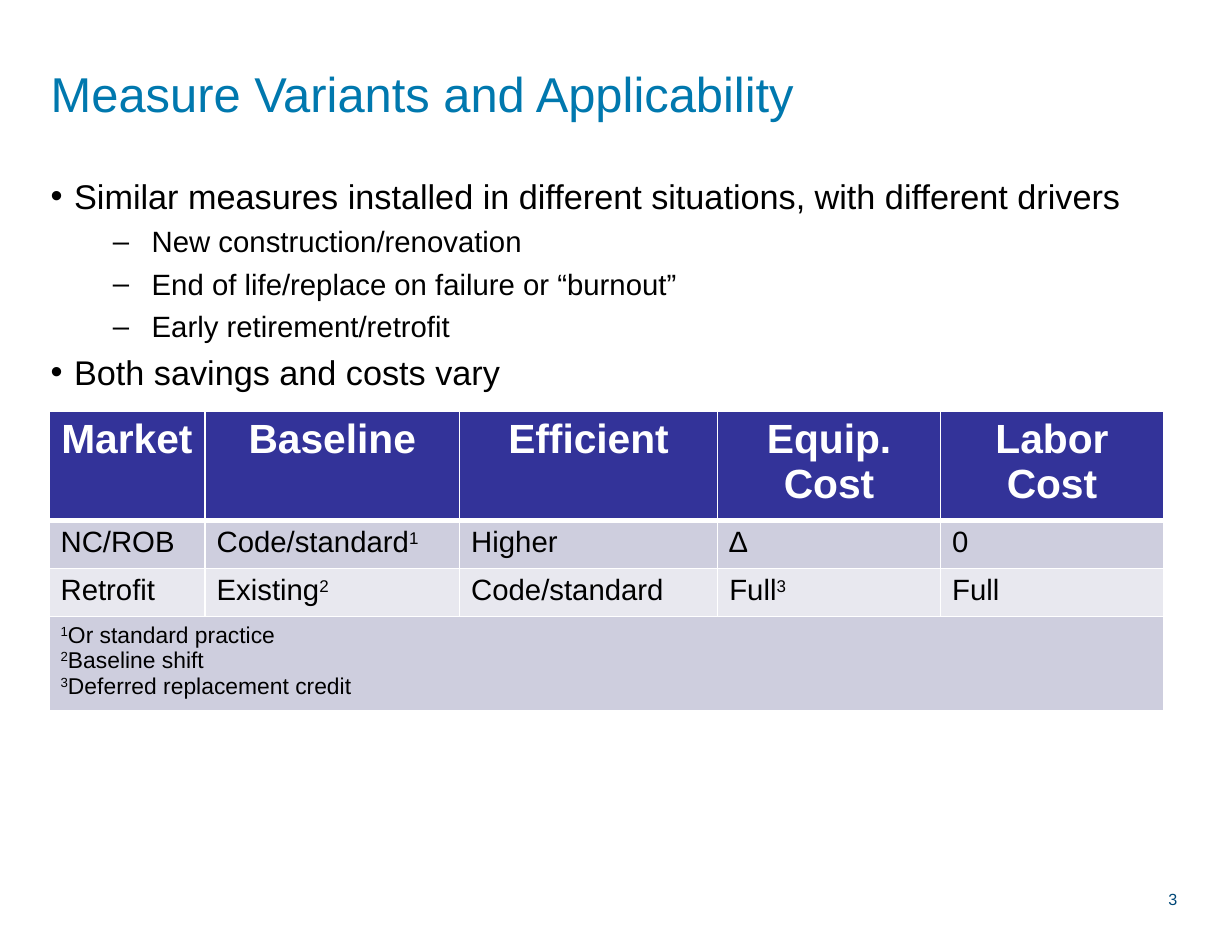
from lxml.etree import SubElement
from pptx import Presentation
from pptx.dml.color import RGBColor
from pptx.enum.text import MSO_ANCHOR, PP_ALIGN
from pptx.oxml.ns import qn
from pptx.util import Pt

COLORS = {
    "title": "0078AE",
    "number": "004878",
    "text": "000000",
    "white": "FFFFFF",
    "header": "333399",
    "band_dark": "CECEDE",
    "band_light": "E8E8EF",
}
FONT = "Arial"

# Bullet styles by level: mark, size, left margin, hanging indent, space before
LEVELS = [("•", 21, 14.4, 14.4, 4.8), ("–", 18, 62, 23.8, 4.4)]
BULLETS = [
    (0, "Similar measures installed in different situations, with different drivers"),
    (1, "New construction/renovation"),
    (1, "End of life/replace on failure or “burnout”"),
    (1, "Early retirement/retrofit"),
    (0, "Both savings and costs vary"),
]

# A caret raises the character after it
COLUMN_SHARES = [1.33, 2.17, 2.2, 1.9, 1.9]
ROW_HEIGHTS = [62, 29.5, 29.5, 54.5]
MARKET_ROWS = [
    ["Market", "Baseline", "Efficient", "Equip. Cost", "Labor Cost"],
    ["NC/ROB", "Code/standard^1", "Higher", "∆", "0"],
    ["Retrofit", "Existing^2", "Code/standard", "Full^3", "Full"],
]
FOOTNOTES = ["^1Or standard practice", "^2Baseline shift", "^3Deferred replacement credit"]


def rgb(name):
    return RGBColor.from_string(COLORS[name])


def style(paragraph, size, color, bold=False, align=PP_ALIGN.LEFT):
    paragraph.alignment = align
    font = paragraph.font
    font.name, font.size, font.bold = FONT, Pt(size), bold
    font.color.rgb = rgb(color)


def add_run(paragraph, text, raised=False):
    if text:
        run = paragraph.add_run()
        run.text = text
        if raised:
            run._r.get_or_add_rPr().set("baseline", "30000")


def write(paragraph, text):
    before, _, after = text.partition("^")
    add_run(paragraph, before)
    add_run(paragraph, after[:1], raised=True)
    add_run(paragraph, after[1:])


def paragraphs(frame, count):
    return [frame.paragraphs[0]] + [frame.add_paragraph() for _ in range(count - 1)]


def add_text_frame(slide, box, inset=None):
    frame = slide.shapes.add_textbox(*map(Pt, box)).text_frame
    frame.word_wrap = True
    if inset is not None:
        frame.margin_left = frame.margin_right = Pt(inset)
        frame.margin_top = frame.margin_bottom = Pt(inset)
    return frame


def add_title(slide, box):
    frame = add_text_frame(slide, box)
    frame.vertical_anchor = MSO_ANCHOR.MIDDLE
    write(frame.paragraphs[0], "Measure Variants and Applicability")
    style(frame.paragraphs[0], 30, "title")


def add_bullets(slide, box):
    frame = add_text_frame(slide, box)
    lines = paragraphs(frame, len(BULLETS))
    for index, (line, (level, text)) in enumerate(zip(lines, BULLETS)):
        mark, size, margin, hanging, gap = LEVELS[level]
        line.level = level
        properties = line._p.get_or_add_pPr()
        properties.set("marL", str(Pt(margin)))
        properties.set("indent", str(-Pt(hanging)))
        SubElement(properties, qn("a:buFont"), typeface=FONT)
        SubElement(properties, qn("a:buChar"), char=mark)
        if index:
            line.space_before = Pt(gap)
        write(line, text)
        style(line, size, "text")


def paint_cell(cell, fill, bottom=1):
    properties = cell._tc.get_or_add_tcPr()
    for side, width in (("L", 1), ("R", 1), ("T", 1), ("B", bottom)):
        border = SubElement(properties, qn(f"a:ln{side}"), w=str(Pt(width)))
        solid = SubElement(border, qn("a:solidFill"))
        SubElement(solid, qn("a:srgbClr"), val=COLORS["white"])
    cell.fill.solid()
    cell.fill.fore_color.rgb = rgb(fill)


def add_market_table(slide, box):
    left, top, width = box
    table = slide.shapes.add_table(
        len(ROW_HEIGHTS), len(COLUMN_SHARES),
        Pt(left), Pt(top), Pt(width), Pt(sum(ROW_HEIGHTS)),
    ).table
    for column, share in zip(table.columns, COLUMN_SHARES):
        column.width = Pt(width * share / sum(COLUMN_SHARES))
    for row, height in zip(table.rows, ROW_HEIGHTS):
        row.height = Pt(height)

    # Fills and rules
    fills = ["header", "band_dark", "band_light", "band_dark"]
    for row, fill in zip(table.rows, fills):
        for cell in row.cells:
            paint_cell(cell, fill, bottom=3 if fill == "header" else 1)

    # Header and market rows
    for r, texts in enumerate(MARKET_ROWS):
        for c, text in enumerate(texts):
            line = table.cell(r, c).text_frame.paragraphs[0]
            write(line, text)
            if r == 0:
                style(line, 25, "white", bold=True, align=PP_ALIGN.CENTER)
            else:
                style(line, 18, "text")

    # Footnotes across all columns
    last = len(ROW_HEIGHTS) - 1
    notes = table.cell(last, 0)
    notes.merge(table.cell(last, len(COLUMN_SHARES) - 1))
    for line, text in zip(paragraphs(notes.text_frame, len(FOOTNOTES)), FOOTNOTES):
        write(line, text)
        style(line, 14, "text")


def add_slide_number(slide, box):
    frame = add_text_frame(slide, box, inset=15)
    write(frame.paragraphs[0], "^3")
    style(frame.paragraphs[0], 17, "number", align=PP_ALIGN.RIGHT)


def main():
    deck = Presentation()
    deck.slide_width, deck.slide_height = Pt(756), Pt(576)
    slide = deck.slides.add_slide(deck.slide_layouts[6])
    add_slide_number(slide, (18.7, 533.5, 718.6, 44.6))
    add_title(slide, (24, 36, 708, 42))
    add_bullets(slide, (24, 104, 708, 406))
    add_market_table(slide, (30, 252, 684))
    deck.save("out.pptx")


if __name__ == "__main__":
    main()
